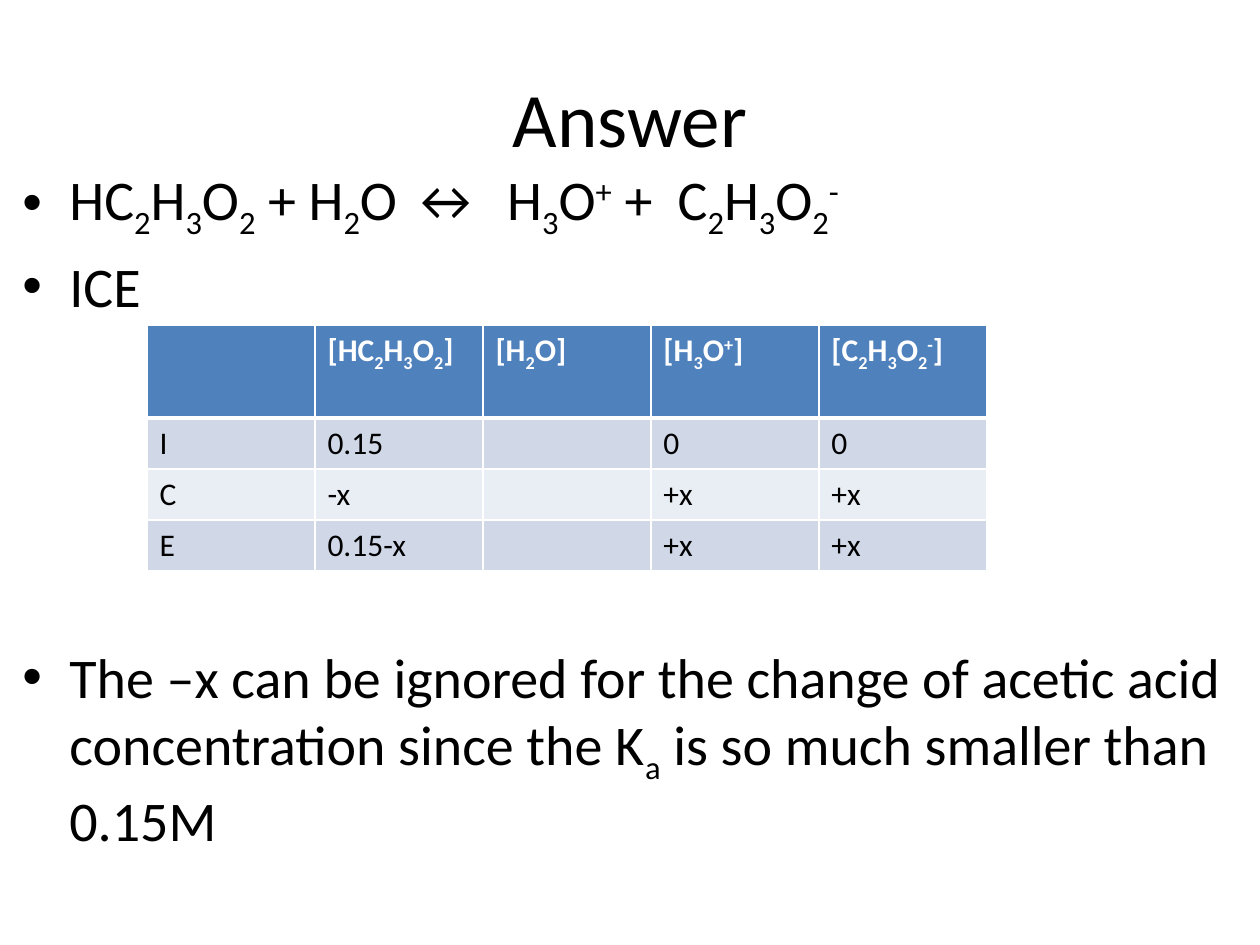
from dataclasses import dataclass

from lxml.etree import SubElement
from pptx import Presentation
from pptx.dml.color import RGBColor as RGB
from pptx.enum.text import MSO_ANCHOR as Anchor, PP_ALIGN as Align
from pptx.oxml.ns import qn
from pptx.util import Emu, Pt


@dataclass(frozen=True)
class Theme:
    font: str = "Calibri"
    title_pt: int = 44
    body_pt: int = 32
    cell_pt: int = 18
    ink: str = "000000"
    paper: str = "FFFFFF"
    header: str = "4F81BD"
    bands: tuple = ("D0D8E8", "E9EDF4")


THEME = Theme()
SHIFTS = {"_": "-25000", "^": "30000"}

POINTS = [  # text, space before in points
    ("HC_2H_3O_2 + H_2O ↔  H_3O^+ +  C_2H_3O_2^-", 6),
    ("ICE", 6),
    ("The –x can be ignored for the change of acetic acid concentration "
     "since the K_a is so much smaller than 0.15M", 185),  # clears the table
]
ICE_ROWS = [
    ["", "[HC_2H_3O_2]", "[H_2O]", "[H_3O^+]", "[C_2H_3O_2^-]"],
    ["I", "0.15", "", "0", "0"],
    ["C", "-x", "", "+x", "+x"],
    ["E", "0.15-x", "", "+x", "+x"],
]


def px(n):
    return Emu(round(n * 914400 / 126))


def split_formula(text):
    """Yield (text, baseline); _ lowers and ^ raises the next character."""
    plain, chars = "", iter(text)
    for ch in chars:
        if ch in SHIFTS:
            if plain:
                yield plain, None
            yield next(chars), SHIFTS[ch]
            plain = ""
        else:
            plain += ch
    if plain:
        yield plain, None


def add_runs(p, text, size, color, bold=False):
    for part, baseline in split_formula(text):
        r = p.add_run()
        r.text = part
        r.font.name = THEME.font
        r.font.size = Pt(size)
        r.font.bold = bold
        r.font.color.rgb = RGB.from_string(color)
        if baseline:
            r.font._element.set("baseline", baseline)


def add_text_frame(s, box, anchor):
    tf = s.shapes.add_textbox(*map(px, box)).text_frame
    tf.word_wrap = True
    tf.vertical_anchor = anchor
    return tf


def add_title(s, box, text):
    p = add_text_frame(s, box, Anchor.MIDDLE).paragraphs[0]
    p.alignment = Align.CENTER
    add_runs(p, text, THEME.title_pt, THEME.ink)


def add_bullets(s, box, points, indent=47):
    tf = add_text_frame(s, box, Anchor.TOP)
    for i, (text, before) in enumerate(points):
        p = tf.add_paragraph() if i else tf.paragraphs[0]
        p.space_before = Pt(before)
        pPr = p._p.get_or_add_pPr()
        pPr.set("marL", str(px(indent)))
        pPr.set("indent", str(-px(indent)))
        SubElement(pPr, qn("a:buFont"), typeface="Arial")
        SubElement(pPr, qn("a:buChar"), char="•")
        add_runs(p, text, THEME.body_pt, THEME.ink)


def set_borders(cell, widths):
    """Draw paper-coloured edges; widths maps L, R, T, B to points."""
    tcPr = cell._tc.get_or_add_tcPr()
    for side, width in widths.items():
        ln = SubElement(tcPr, qn(f"a:ln{side}"), w=str(Pt(width)))
        fill = SubElement(ln, qn("a:solidFill"))
        SubElement(fill, qn("a:srgbClr"), val=THEME.paper)


def add_ice_table(s, box, rows, header_height=93):
    n_rows, n_cols = len(rows), len(rows[0])
    table = s.shapes.add_table(n_rows, n_cols, *map(px, box)).table
    for col in table.columns:
        col.width = px(box[2] / n_cols)
    row_height = (box[3] - header_height) / (n_rows - 1)
    for i, row in enumerate(rows):
        head = i == 0
        table.rows[i].height = px(header_height if head else row_height)
        fill = THEME.header if head else THEME.bands[(i - 1) % 2]
        ink = THEME.paper if head else THEME.ink
        for j, text in enumerate(row):
            cell = table.cell(i, j)
            set_borders(cell, {"L": 1, "R": 1, "T": 3 if i == 1 else 1,
                               "B": 3 if head else 1})
            cell.fill.solid()
            cell.fill.fore_color.rgb = RGB.from_string(fill)
            add_runs(cell.text_frame.paragraphs[0], text, THEME.cell_pt, ink, head)


def main():
    prs = Presentation()
    prs.slide_width, prs.slide_height = px(1260), px(945)
    s = prs.slides.add_slide(prs.slide_layouts[6])
    add_title(s, (63, 38, 1134, 158), "Answer")
    add_bullets(s, (10, 158, 1239, 735), POINTS)
    add_ice_table(s, (147, 325, 840, 246), ICE_ROWS)
    prs.save("out.pptx")


if __name__ == "__main__":
    main()
